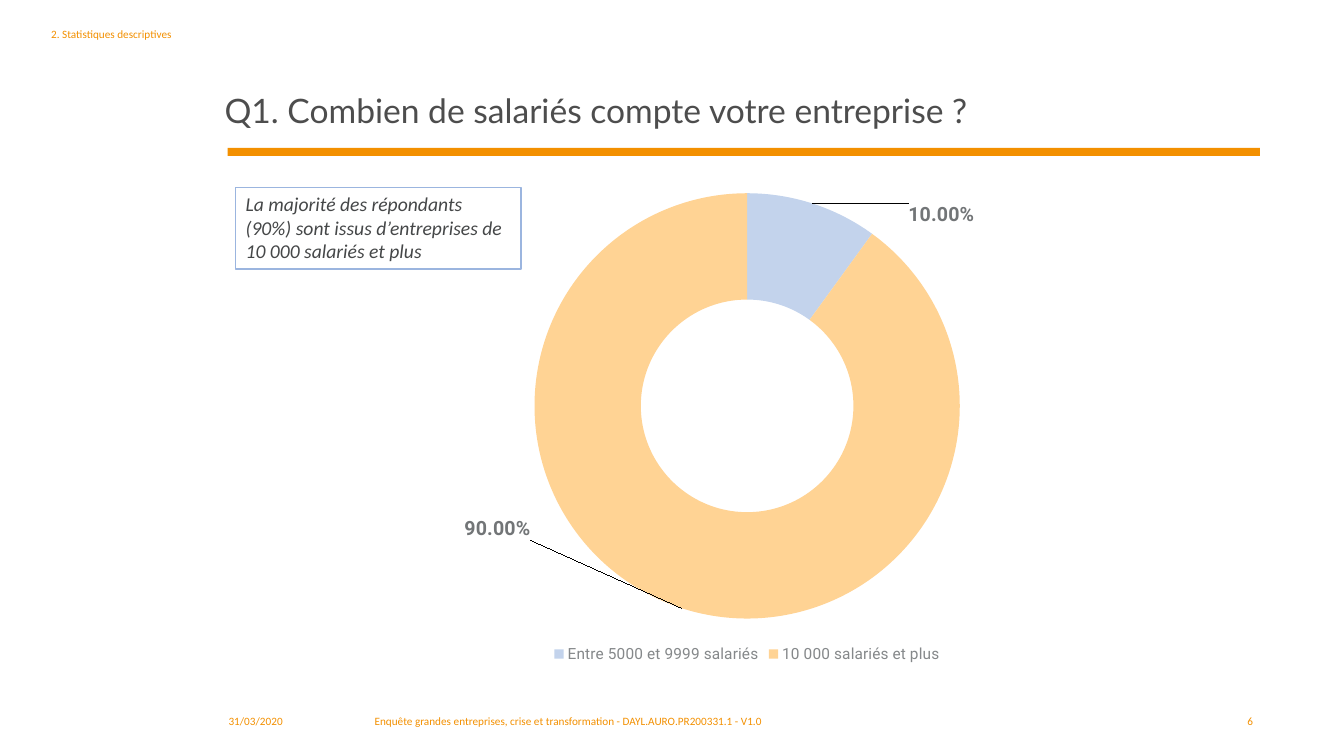
from lxml.etree import SubElement
from pptx import Presentation
from pptx.chart.data import CategoryChartData
from pptx.dml.color import RGBColor
from pptx.enum.chart import XL_CHART_TYPE, XL_LEGEND_POSITION
from pptx.enum.shapes import MSO_SHAPE
from pptx.enum.text import MSO_ANCHOR, PP_ALIGN
from pptx.oxml import parse_xml
from pptx.oxml.ns import nsdecls, qn
from pptx.util import Cm, Pt

ORANGE = RGBColor(0xF3, 0x90, 0x00)
PALE_ORANGE = RGBColor(0xFF, 0xD3, 0x94)
PALE_BLUE = RGBColor(0xC3, 0xD3, 0xEC)
BORDER_BLUE = RGBColor(0x9B, 0xB5, 0xDF)
TITLE_GREY = RGBColor(0x4D, 0x4D, 0x4D)
TEXT_GREY = RGBColor(0x45, 0x47, 0x48)
LABEL_GREY = RGBColor(0x72, 0x75, 0x77)
LEGEND_GREY = RGBColor(0x85, 0x88, 0x8A)
WHITE = RGBColor(0xFF, 0xFF, 0xFF)

# category, share, colour, label offset as a fraction of the chart
SHARES = [
    ("Entre 5000 et 9999 salariés", 0.1, PALE_BLUE, {"x": 0.21, "y": -0.08}),
    ("10 000 salariés et plus", 0.9, PALE_ORANGE, {"x": -0.29, "y": -0.06}),
]
RING_AREA = {"layoutTarget": "inner", "xMode": "edge", "yMode": "edge",
             "x": 0.19, "y": 0.03, "w": 0.62, "h": 0.87}
LEADER_LINES = (
    f'<c:extLst {nsdecls("c")}><c:ext uri="{{CE6537A1-D6FC-4f65-9D91-7224C49458BB}}" '
    'xmlns:c15="http://schemas.microsoft.com/office/drawing/2012/chart">'
    '<c15:showLeaderLines val="1"/></c:ext></c:extLst>'
)


def style_font(font, name, size, color, bold=False, italic=False):
    font.name = name
    font.size = Pt(size)
    font.color.rgb = color
    font.bold = bold
    font.italic = italic


def set_layout(parent, index, values):
    """Give a chart part a manual layout as its child number index."""
    for old in parent.findall(qn("c:layout")):
        parent.remove(old)
    layout = parse_xml(f'<c:layout {nsdecls("c")}/>')
    manual = SubElement(layout, qn("c:manualLayout"))
    for key, value in values.items():
        SubElement(manual, qn(f"c:{key}")).set("val", str(value))
    parent.insert(index, layout)


class SurveyPage:
    def __init__(self, deck):
        self.shapes = deck.slides.add_slide(deck.slide_layouts[6]).shapes

    def fill_text(self, box, words, size=8, color=ORANGE, font="Calibri", italic=False,
                  align=PP_ALIGN.LEFT, anchor=MSO_ANCHOR.TOP, spacing=1.0):
        frame = box.text_frame
        frame.word_wrap = True
        frame.vertical_anchor = anchor
        para = frame.paragraphs[0]
        para.alignment = align
        para.line_spacing = spacing
        span = para.add_run()
        span.text = words
        style_font(span.font, font, size, color, italic=italic)

    def text(self, place, words, **style):
        self.fill_text(self.shapes.add_textbox(*map(Cm, place)), words, **style)

    def rectangle(self, place, fill, line=None):
        box = self.shapes.add_shape(MSO_SHAPE.RECTANGLE, *map(Cm, place))
        box.shadow.inherit = False
        box.fill.solid()
        box.fill.fore_color.rgb = fill
        if line is None:
            box.line.fill.background()
        else:
            box.line.color.rgb = line
            box.line.width = Pt(1)
        return box

    def doughnut(self, place, shares):
        data = CategoryChartData(number_format="0.00%")
        data.categories = [name for name, *_ in shares]
        data.add_series("Series 1", [share for _, share, *_ in shares])
        chart = self.shapes.add_chart(
            XL_CHART_TYPE.DOUGHNUT, *map(Cm, place), data).chart
        style_font(chart.font, "Roboto", 10, TEXT_GREY)
        chart.has_title = False
        chart.has_legend = True
        chart.legend.position = XL_LEGEND_POSITION.BOTTOM
        chart.legend.include_in_layout = False
        style_font(chart.legend.font, "Roboto", 11, LEGEND_GREY)

        plot = chart.plots[0]
        plot.vary_by_categories = True
        series = plot.series[0]
        labels = series.data_labels
        labels.show_value = True
        labels.show_percentage = False
        labels.number_format = "0.00%"
        labels.number_format_is_linked = False
        style_font(labels.font, "Roboto", 14, LABEL_GREY, bold=True)
        for index, (_, _, color, _) in enumerate(shares):
            point = series.points[index]
            point.format.fill.solid()
            point.format.fill.fore_color.rgb = color
            style_font(point.data_label.font, "Roboto", 14, LABEL_GREY, bold=True)

        chart_xml = chart.element
        for label, (*_, offset) in zip(chart_xml.iter(qn("c:dLbl")), shares):
            set_layout(label, 1, offset)
        set_layout(next(chart_xml.iter(qn("c:plotArea"))), 0, RING_AREA)
        series_labels = next(chart_xml.iter(qn("c:dLbls")))
        series_labels.append(parse_xml(LEADER_LINES))


def main():
    deck = Presentation()
    deck.slide_width = Cm(33.87)
    deck.slide_height = Cm(19.05)
    page = SurveyPage(deck)

    page.rectangle((5.74, 3.73, 26.01, 0.2), ORANGE)
    page.text((5.41, 0.56, 26.34, 2.87),
              "Q1. Combien de salariés compte votre entreprise ?",
              size=24, color=TITLE_GREY, font="Lato",
              anchor=MSO_ANCHOR.BOTTOM, spacing=0.9)
    page.text((1.04, 0.56, 4.29, 3.48), "2. Statistiques descriptives")

    footer_top, footer_height = 17.88, 0.91
    for left, width, words, align in [
        (5.51, 3.61, "31/03/2020", PP_ALIGN.LEFT),
        (9.19, 13.89, "Enquête grandes entreprises, crise et transformation"
                      " - DAYL.AURO.PR200331.1 - V1.0", PP_ALIGN.LEFT),
        (28.73, 3.1, "6", PP_ALIGN.RIGHT),
    ]:
        page.text((left, footer_top, width, footer_height), words, align=align)

    page.doughnut((10.13, 4.5, 17.4, 12.32), SHARES)
    callout = page.rectangle((5.94, 4.72, 7.19, 2.06), WHITE, BORDER_BLUE)
    page.fill_text(callout, "La majorité des répondants (90%) sont issus d’entreprises"
                            " de 10 000 salariés et plus",
                   size=14, color=TEXT_GREY, italic=True)

    deck.save("out.pptx")


if __name__ == "__main__":
    main()
